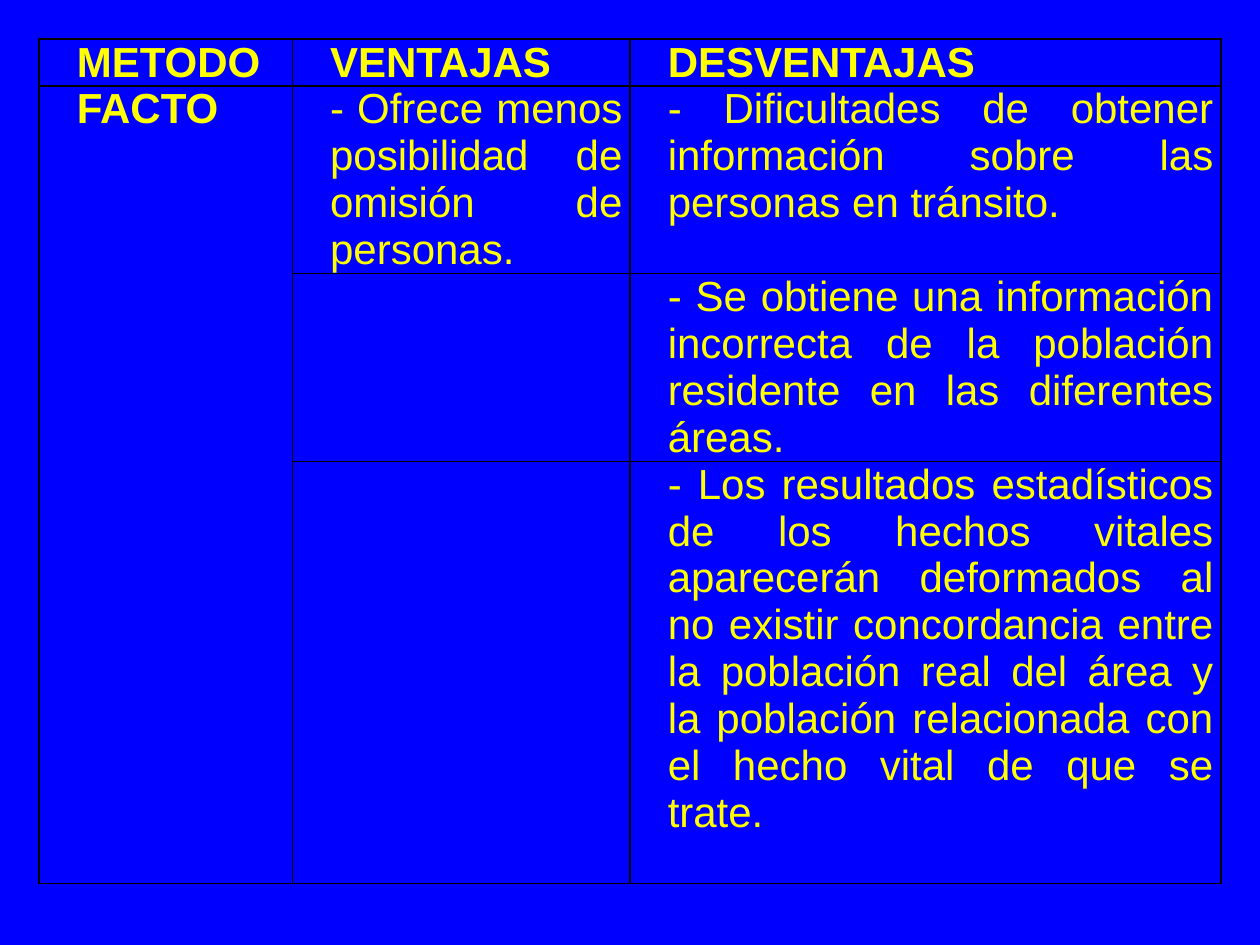
from lxml import etree
from pptx import Presentation, util as u
from pptx.dml.color import RGBColor
from pptx.enum import text
from pptx.oxml.ns import qn

BLUE = RGBColor(0x00, 0x00, 0xFF)
YELLOW = RGBColor(0xFF, 0xFF, 0x00)
BLACK = RGBColor(0x00, 0x00, 0x00)

ROWS = [
    ("METODO", "VENTAJAS", "DESVENTAJAS"),
    ("FACTO", "- Ofrece menos posibilidad de omisión de personas.",
     "- Dificultades de obtener información sobre las personas en tránsito."),
    ("", "", "- Se obtiene una información incorrecta de la población residente "
     "en las diferentes áreas."),
    ("", "", "- Los resultados estadísticos de los hechos vitales aparecerán "
     "deformados al no existir concordancia entre la población real del área "
     "y la población relacionada con el hecho vital de que se trate."),
]
COL_WIDTHS = (2.01, 2.68, 4.69)
ROW_HEIGHTS = (0.37, 1.49, 1.49, 3.35)
LEFT = TOP = 0.31
INDENT = 0.24
FONT = {"name": "Arial", "size": u.Pt(24)}
MARGINS = {"margin_left": u.Inches(0.06), "margin_right": u.Inches(0.06),
           "margin_top": 0, "margin_bottom": 0}


def set_all(obj, values):
    for name, value in values.items():
        setattr(obj, name, value)


def add_borders(cell):
    tcPr = cell._tc.get_or_add_tcPr()
    for side in ("a:lnL", "a:lnR", "a:lnT", "a:lnB"):
        ln = etree.SubElement(tcPr, qn(side), w=str(u.Pt(1)))
        fill = etree.SubElement(ln, qn("a:solidFill"))
        etree.SubElement(fill, qn("a:srgbClr"), val=str(BLACK))


def write(cell, words, bold):
    p = cell.text_frame.paragraphs[0]
    p.alignment = text.PP_ALIGN.JUSTIFY
    pPr = p._p.get_or_add_pPr()
    pPr.set("marL", str(u.Inches(INDENT)))
    pPr.set("indent", "0")
    r = p.add_run()
    r.text = words
    set_all(r.font, {**FONT, "bold": bold})
    r.font.color.rgb = YELLOW


def main():
    prs = Presentation()
    prs.slide_width, prs.slide_height = u.Inches(10), u.Inches(7.5)
    s = prs.slides.add_slide(prs.slide_layouts[6])
    s.background.fill.solid()
    s.background.fill.fore_color.rgb = BLUE

    box = (LEFT, TOP, sum(COL_WIDTHS), sum(ROW_HEIGHTS))
    table = s.shapes.add_table(len(ROWS), len(COL_WIDTHS), *map(u.Inches, box)).table
    set_all(table, {"first_row": False, "horz_banding": False})
    for col, width in zip(table.columns, COL_WIDTHS):
        col.width = u.Inches(width)
    for row, height in zip(table.rows, ROW_HEIGHTS):
        row.height = u.Inches(height)

    for i, row in enumerate(ROWS):
        for j, words in enumerate(row):
            cell = table.cell(i, j)
            set_all(cell, MARGINS)
            add_borders(cell)
            cell.fill.background()
            if words:
                write(cell, words, bold=i == 0 or j == 0)
    table.cell(1, 0).merge(table.cell(len(ROWS) - 1, 0))
    prs.save("out.pptx")


if __name__ == "__main__":
    main()
